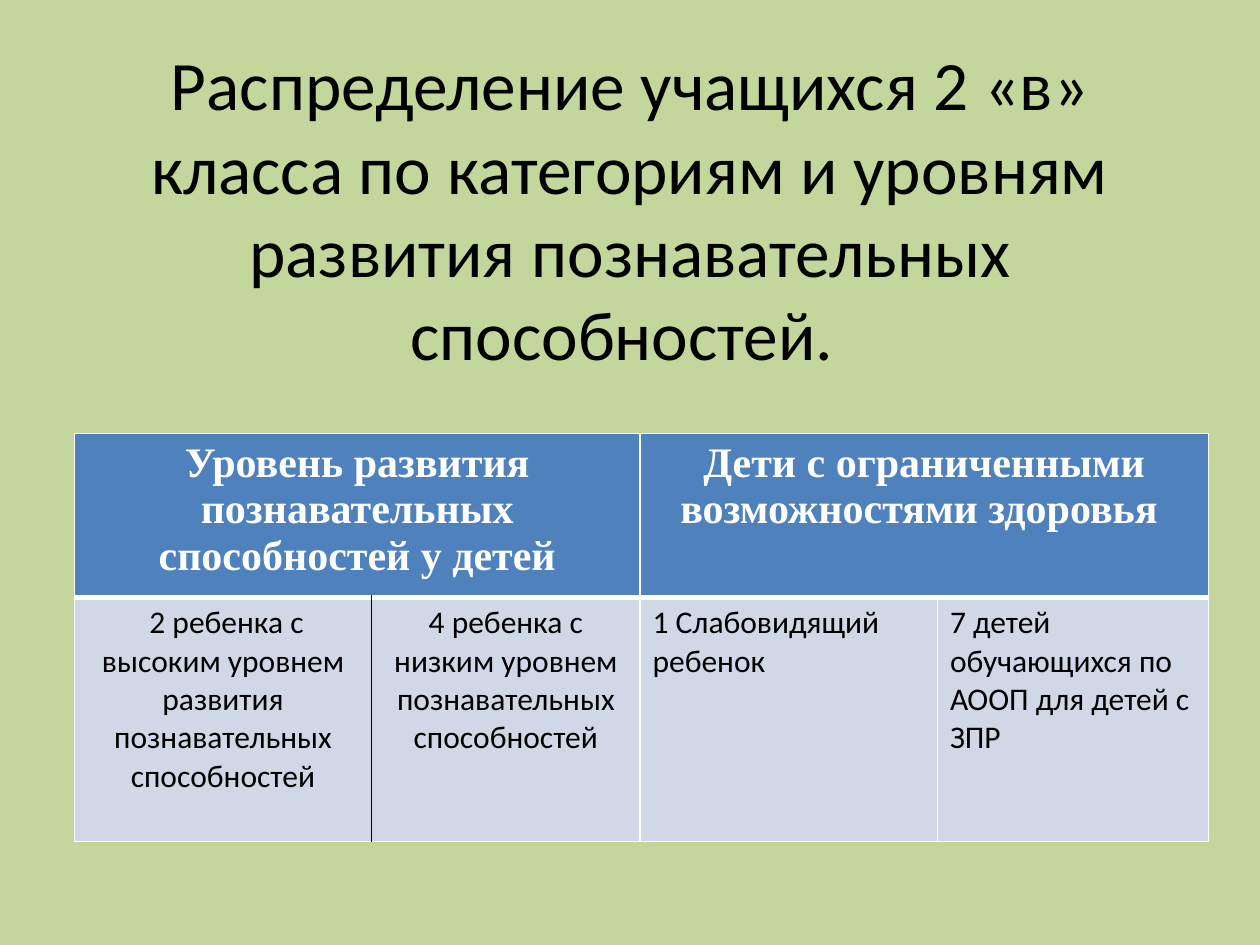
from lxml.etree import SubElement
from pptx import Presentation
from pptx.dml.color import RGBColor
from pptx.enum.text import MSO_ANCHOR, PP_ALIGN
from pptx.oxml.ns import qn
from pptx.util import Inches, Pt

BACKGROUND = RGBColor(0xC3, 0xD6, 0x9B)
HEADER_BLUE = RGBColor(0x4F, 0x81, 0xBD)
BODY_BLUE = RGBColor(0xD0, 0xD8, 0xE8)
WHITE = RGBColor(0xFF, 0xFF, 0xFF)
BLACK = RGBColor(0x00, 0x00, 0x00)

TITLE_FONT = {"name": "Calibri", "size": Pt(39.6), "bold": False}
HEADER_FONT = {"name": "Times New Roman", "size": Pt(24), "bold": True}
BODY_FONT = {"name": "Calibri", "size": Pt(18), "bold": False}


class SlideBuilder:
    """Holds the current slide and its text and table style."""

    def __init__(self, slide):
        self.slide = slide
        slide.background.fill.solid()
        slide.background.fill.fore_color.rgb = BACKGROUND

    def label(self, frame, text, style, color, align):
        paragraph = frame.paragraphs[0]
        paragraph.alignment = align
        run = paragraph.add_run()
        run.text = text
        for attribute, value in style.items():
            setattr(run.font, attribute, value)
        run.font.color.rgb = color

    def title(self, text, left, top, width, height):
        frame = self.slide.shapes.add_textbox(left, top, width, height).text_frame
        frame.word_wrap = True
        frame.vertical_anchor = MSO_ANCHOR.MIDDLE
        self.label(frame, text, TITLE_FONT, BLACK, PP_ALIGN.CENTER)

    def table(self, left, top, widths, heights):
        grid = self.slide.shapes.add_table(
            len(heights), len(widths), left, top, sum(widths), sum(heights)).table
        for column, width in zip(grid.columns, widths):
            column.width = width
        for row, height in zip(grid.rows, heights):
            row.height = height
        return grid

    def cell(self, cell, fill, **borders):
        cell.fill.solid()
        cell.fill.fore_color.rgb = fill
        properties = cell._tc.get_or_add_tcPr()
        # Border lines come before the fill, in the order L, R, T, B
        for position, side in enumerate("LRTB"):
            color, points = borders.get(side, (WHITE, 1))
            line = SubElement(properties, qn(f"a:ln{side}"), w=str(Pt(points)))
            solid = SubElement(line, qn("a:solidFill"))
            SubElement(solid, qn("a:srgbClr"), val=str(color))
            properties.insert(position, line)


def main():
    presentation = Presentation()
    presentation.slide_width, presentation.slide_height = Inches(10), Inches(7.5)
    builder = SlideBuilder(presentation.slides.add_slide(presentation.slide_layouts[6]))

    # Title
    builder.title(
        "Распределение учащихся 2 «в» класса по категориям и уровням "
        "развития познавательных способностей. ",
        Inches(0.5), Inches(0.3), Inches(9), Inches(2.7))

    # Table grid
    widths = [Inches(width) for width in (2.36, 2.13, 2.36, 2.15)]
    groups = builder.table(Inches(0.59), Inches(3.44), widths,
                           [Inches(1.2), Inches(1.94)])

    # Header row: each heading spans two columns
    headings = ("Уровень развития познавательных способностей у детей",
                "Дети с ограниченными возможностями здоровья ")
    for column in range(len(widths)):
        builder.cell(groups.cell(0, column), HEADER_BLUE, B=(WHITE, 3))
    for index, heading in enumerate(headings):
        header = groups.cell(0, 2 * index)
        header.merge(groups.cell(0, 2 * index + 1))
        builder.label(header.text_frame, heading, HEADER_FONT, WHITE, PP_ALIGN.CENTER)

    # Body row: a black line divides the first two categories
    divider = (BLACK, 1)
    categories = (
        (" 2 ребенка с высоким уровнем развития познавательных способностей",
         PP_ALIGN.CENTER, {"R": divider}),
        ("4 ребенка с низким уровнем познавательных способностей",
         PP_ALIGN.CENTER, {"L": divider}),
        ("1 Слабовидящий ребенок", PP_ALIGN.LEFT, {}),
        ("7 детей обучающихся по АООП для детей с ЗПР", PP_ALIGN.LEFT, {}),
    )
    for column, (category, align, borders) in enumerate(categories):
        body = groups.cell(1, column)
        builder.cell(body, BODY_BLUE, **borders)
        builder.label(body.text_frame, category, BODY_FONT, BLACK, align)

    presentation.save("out.pptx")


if __name__ == "__main__":
    main()
